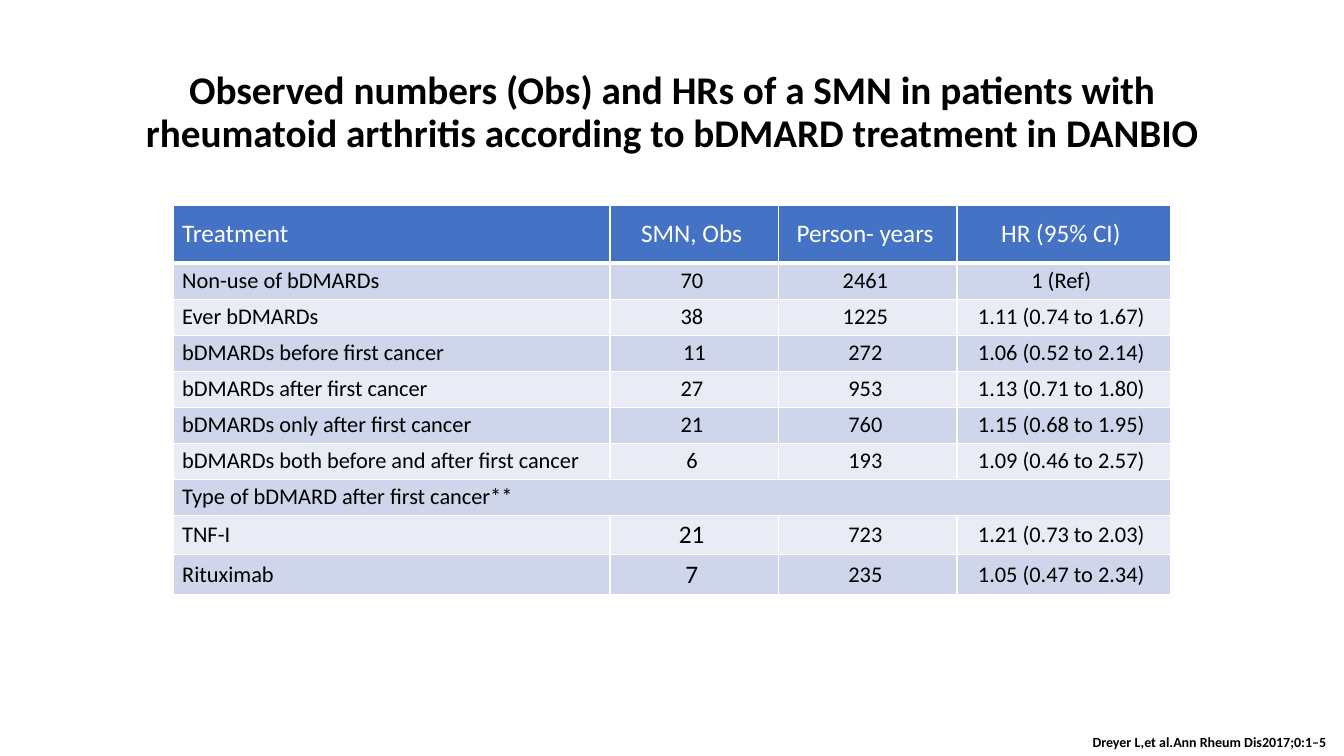
"""Build the slide on SMN hazard ratios by bDMARD treatment in DANBIO."""
from lxml.etree import SubElement
from pptx import Presentation
from pptx.dml.color import RGBColor
from pptx.enum.text import MSO_ANCHOR, PP_ALIGN
from pptx.oxml.ns import qn
from pptx.util import Pt

COLORS = {
    "white": "FFFFFF",
    "black": "000000",
    "header": "4472C4",
    "odd": "CFD5EA",
    "even": "E9EBF5",
}


def add_run(paragraph, text, size, color, bold=False):
    run = paragraph.add_run()
    run.text = text
    run.font.name = "Calibri"
    run.font.size = Pt(size)
    run.font.bold = bold
    run.font.color.rgb = RGBColor.from_string(COLORS[color])


def add_border(cell, side, width):
    properties = cell._tc.get_or_add_tcPr()
    line = SubElement(properties, qn(f"a:ln{side}"), w=str(Pt(width)))
    fill = SubElement(line, qn("a:solidFill"))
    SubElement(fill, qn("a:srgbClr"), val=COLORS["white"])


prs = Presentation()
prs.slide_width = Pt(960)
prs.slide_height = Pt(540)
slide = prs.slides.add_slide(prs.slide_layouts[6])

title = slide.shapes.add_textbox(Pt(66), Pt(28.75), Pt(828), Pt(104.4)).text_frame
title.word_wrap = True
title.vertical_anchor = MSO_ANCHOR.MIDDLE
heading = title.paragraphs[0]
heading.alignment = PP_ALIGN.CENTER
heading.line_spacing = 0.9
add_run(
    heading,
    "Observed numbers (Obs) and HRs of a SMN in patients with "
    "rheumatoid arthritis according to bDMARD treatment in DANBIO",
    28, "black", bold=True,
)

results = [
    ("Treatment", "SMN, Obs ", "Person- years ", "HR (95% CI) "),
    ("Non-use of bDMARDs", "70 ", "2461 ", "1 (Ref) "),
    ("Ever bDMARDs", "38 ", "1225 ", "1.11 (0.74 to 1.67) "),
    ("bDMARDs before first cancer", "11", "272 ", "1.06 (0.52 to 2.14) "),
    ("bDMARDs after first cancer", "27 ", "953 ", "1.13 (0.71 to 1.80) "),
    ("bDMARDs only after first cancer", "21 ", "760 ", "1.15 (0.68 to 1.95) "),
    ("bDMARDs both before and after first cancer", "6 ", "193 ", "1.09 (0.46 to 2.57) "),
    ("Type of bDMARD after first cancer**",),
    ("TNF-I", "21 ", "723 ", "1.21 (0.73 to 2.03) "),
    ("Rituximab", "7 ", "235 ", "1.05 (0.47 to 2.34) "),
]
column_widths = [311.8, 120.6, 127.2, 152.6]
row_heights = [41.5] + [25.75] * 7 + [28.2] * 2
subheading_row = 7

table = slide.shapes.add_table(
    len(results), len(column_widths), Pt(124), Pt(146.4),
    Pt(sum(column_widths)), Pt(sum(row_heights)),
).table
table.first_row = False
table.horz_banding = False
for column, width in zip(table.columns, column_widths):
    column.width = Pt(width)

for r, (row, height) in enumerate(zip(table.rows, row_heights)):
    row.height = Pt(height)
    band = "header" if r == 0 else "odd" if r % 2 else "even"
    for c, cell in enumerate(row.cells):
        for side in "LRTB":
            under_header = (r, side) in ((0, "B"), (1, "T"))
            add_border(cell, side, 3 if under_header else 1)
        cell.fill.solid()
        cell.fill.fore_color.rgb = RGBColor.from_string(COLORS[band])
        cell.vertical_anchor = MSO_ANCHOR.MIDDLE
        cell.margin_left = cell.margin_right = Pt(6.2)
        cell.margin_top = cell.margin_bottom = Pt(3.1)
        if c < len(results[r]):
            entry = cell.text_frame.paragraphs[0]
            entry.alignment = PP_ALIGN.CENTER if c else PP_ALIGN.LEFT
            large = r == 0 or (r > subheading_row and c == 1)
            add_run(entry, results[r][c], 18 if large else 16,
                    "black" if r else "white")

table.cell(subheading_row, 0).merge(table.cell(subheading_row, 3))

citation = slide.shapes.add_textbox(Pt(773.3), Pt(520.6), Pt(183.6), Pt(19.4)).text_frame
citation.word_wrap = False
add_run(citation.paragraphs[0], "Dreyer L,et al.Ann Rheum Dis2017;0:1–5", 10, "black", bold=True)

prs.save("out.pptx")
